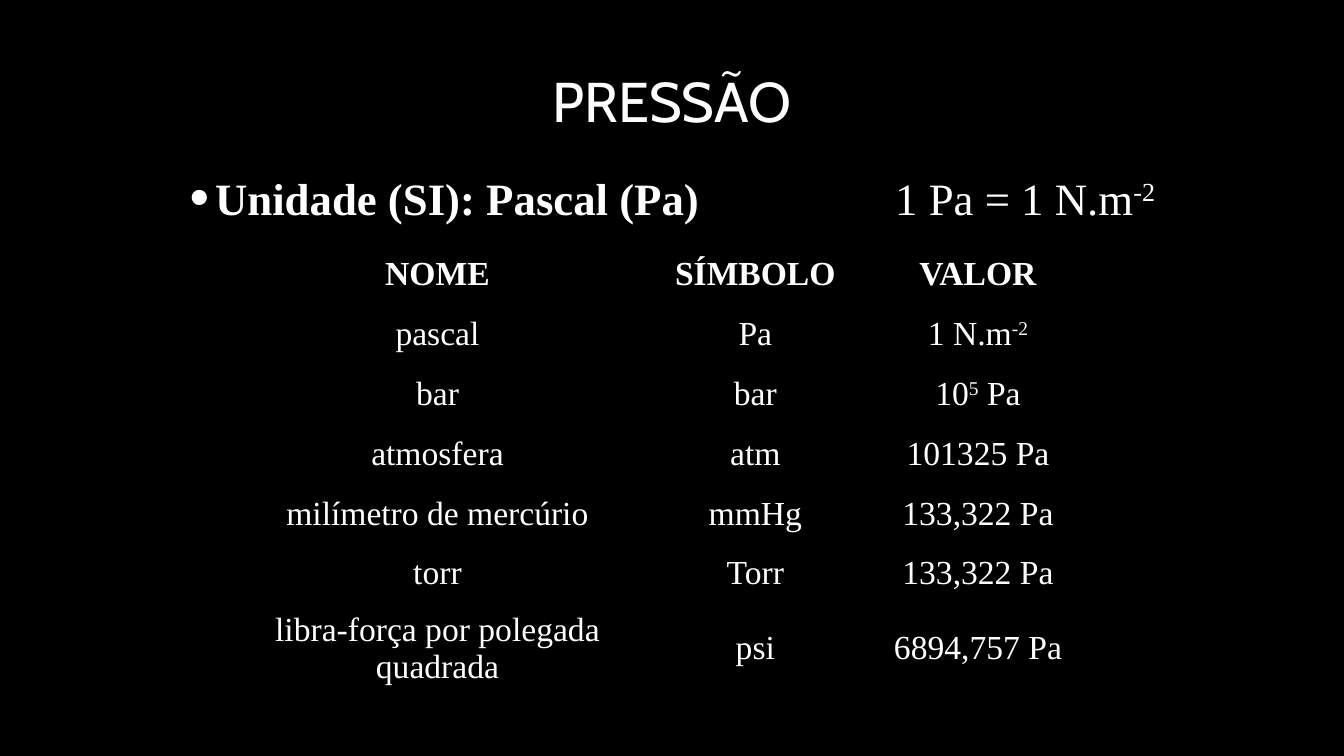
from dataclasses import dataclass

from lxml import etree
from pptx import Presentation
from pptx.dml.color import RGBColor
from pptx.enum.text import MSO_ANCHOR, PP_ALIGN
from pptx.oxml.ns import qn
from pptx.util import Cm, Pt

MIDDLE, TOP = MSO_ANCHOR.MIDDLE, MSO_ANCHOR.TOP
CENTER, LEFT = PP_ALIGN.CENTER, PP_ALIGN.LEFT


@dataclass(frozen=True)
class Theme:
    background: RGBColor = RGBColor(0, 0, 0)
    text: RGBColor = RGBColor(255, 255, 255)
    border: str = "000000"
    title_font: str = "Cabin"
    body_font: str = "Times New Roman"
    title_size: int = 40
    body_size: int = 32
    table_size: int = 24


class SlideBuilder:
    def __init__(self, slide, theme):
        self.slide, self.theme = slide, theme
        slide.background.fill.solid()
        slide.background.fill.fore_color.rgb = theme.background

    def style(self, paragraph, font_name, size, align, bold=None):
        paragraph.alignment = align
        font = paragraph.font
        font.name, font.size, font.bold = font_name, Pt(size), bold
        font.color.rgb = self.theme.text

    def add_runs(self, paragraph, text):
        """Add runs; every second part between ^ marks is superscript."""
        for i, part in enumerate(text.split("^")):
            if part:
                run = paragraph.add_run()
                run.text = part
                if i % 2:
                    run.font._element.set("baseline", "30000")

    def text_box(self, left, top, width, height, anchor):
        frame = self.slide.shapes.add_textbox(
            Cm(left), Cm(top), Cm(width), Cm(height)).text_frame
        frame.word_wrap = True
        frame.vertical_anchor = anchor
        return frame

    def title(self, text, *box):
        paragraph = self.text_box(*box, MIDDLE).paragraphs[0]
        paragraph.line_spacing = 0.9
        self.style(paragraph, self.theme.title_font, self.theme.title_size, CENTER)
        self.add_runs(paragraph, text)

    def bullet(self, label, equation, inset, tab, *box):
        frame = self.text_box(*box, TOP)
        frame.margin_left = Cm(inset)
        paragraph = frame.paragraphs[0]
        # Hanging bullet and the tab stop for the equation
        props = paragraph._p.get_or_add_pPr()
        props.set("marL", str(Cm(0.64)))
        props.set("indent", str(-Cm(0.64)))
        etree.SubElement(props, qn("a:buSzPct"), val="125000")
        etree.SubElement(props, qn("a:buFont"), typeface="Arial")
        etree.SubElement(props, qn("a:buChar"), char="•")
        tabs = etree.SubElement(props, qn("a:tabLst"))
        etree.SubElement(tabs, qn("a:tab"), pos=str(Cm(tab)), algn="l")
        self.style(paragraph, self.theme.body_font, self.theme.body_size, LEFT)
        self.add_runs(paragraph, label + "\t")
        paragraph.runs[0].font.bold = True
        self.add_runs(paragraph, equation)

    def cell_borders(self, cell):
        props = cell._tc.get_or_add_tcPr()
        for i, side in enumerate(("lnL", "lnR", "lnT", "lnB")):
            line = etree.Element(qn(f"a:{side}"), w=str(Pt(1)))
            fill = etree.SubElement(line, qn("a:solidFill"))
            etree.SubElement(fill, qn("a:srgbClr"), val=self.theme.border)
            props.insert(i, line)

    def table(self, rows, left, top, widths, heights):
        table = self.slide.shapes.add_table(
            len(rows), len(widths), Cm(left), Cm(top),
            Cm(sum(widths)), Cm(sum(heights))).table
        table.horz_banding = False
        for column, width in zip(table.columns, widths):
            column.width = Cm(width)
        for r, (row, height) in enumerate(zip(rows, heights)):
            table.rows[r].height = Cm(height)
            for c, text in enumerate(row):
                cell = table.cell(r, c)
                cell.fill.background()
                self.cell_borders(cell)
                cell.vertical_anchor = MIDDLE
                cell.margin_left = cell.margin_right = Cm(0.13)
                cell.margin_top = cell.margin_bottom = 0
                paragraph = cell.text_frame.paragraphs[0]
                self.style(paragraph, self.theme.body_font,
                           self.theme.table_size, CENTER, bold=r == 0)
                self.add_runs(paragraph, text)


UNITS = [
    ("NOME", "SÍMBOLO", "VALOR"),
    ("pascal", "Pa", "1 N.m^-2^"),
    ("bar", "bar", "10^5^ Pa"),
    ("atmosfera", "atm", "101325 Pa"),
    ("milímetro de mercúrio", "mmHg", "133,322 Pa"),
    ("torr", "Torr", "133,322 Pa"),
    ("libra-força por polegada quadrada", "psi", "6894,757 Pa"),
]


def main():
    prs = Presentation()
    prs.slide_width, prs.slide_height = Cm(33.87), Cm(19.05)
    builder = SlideBuilder(prs.slides.add_slide(prs.slide_layouts[6]), Theme())

    # Heading
    builder.title("PRESSÃO", 3.18, 1.55, 27.51, 2.18)
    # SI unit and its definition
    builder.bullet("Unidade (SI): Pascal (Pa)", "1 Pa = 1 N.m^-2^",
                   1.6, 17.78, 3.18, 4.17, 27.51, 2.77)
    # Pressure units
    builder.table(UNITS, 5.82, 6.15, (10.41, 5.61, 5.61), [1.51] * 6 + [2.26])

    prs.save("out.pptx")


if __name__ == "__main__":
    main()
